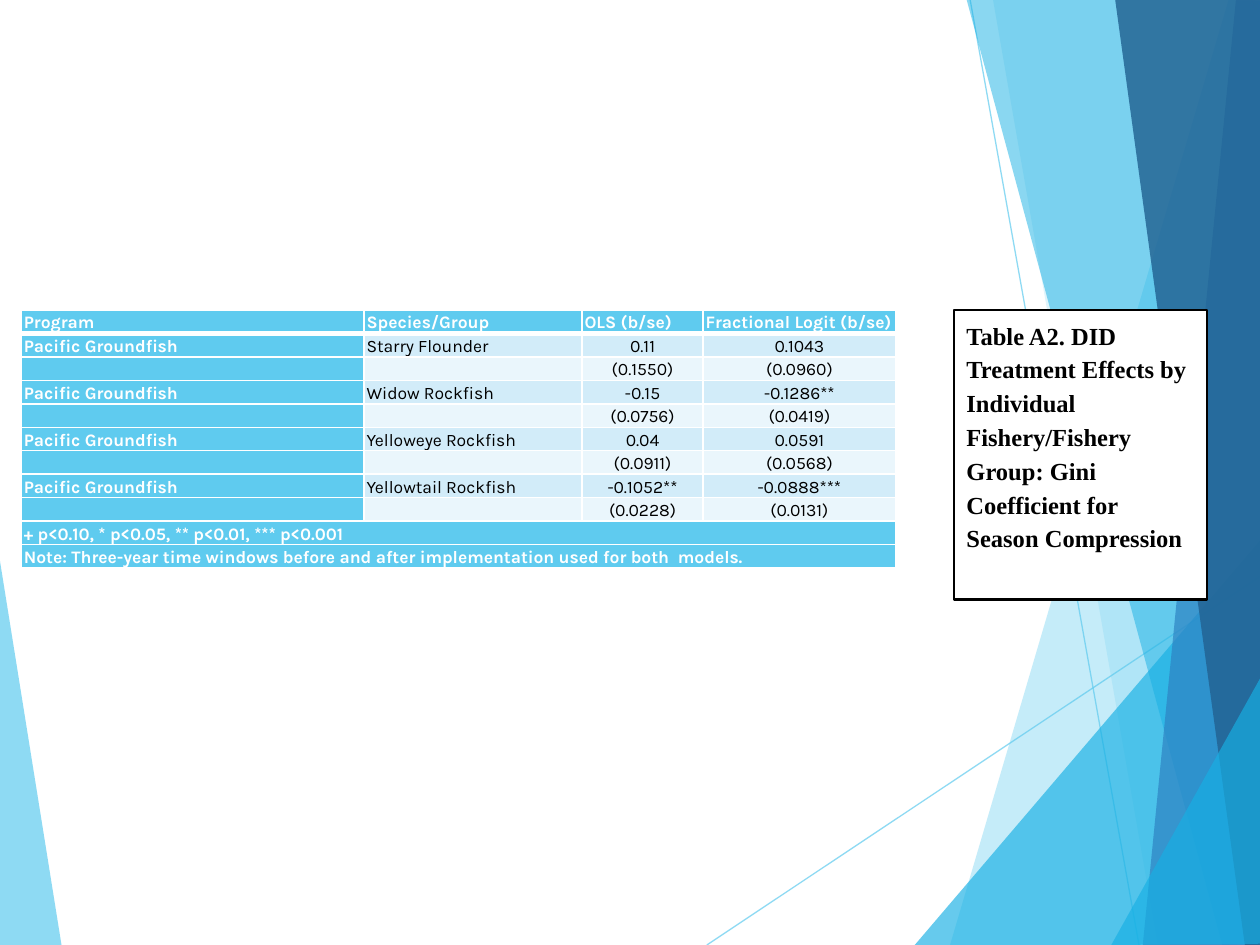
from dataclasses import dataclass

import lxml.etree
import pptx
import pptx.dml.color
import pptx.enum.dml
import pptx.enum.text
import pptx.oxml.ns
import pptx.util

Inches, Pt = pptx.util.Inches, pptx.util.Pt
ALIGN, ANCHOR = pptx.enum.text.PP_ALIGN, pptx.enum.text.MSO_ANCHOR
qn = pptx.oxml.ns.qn


@dataclass(frozen=True)
class Theme:
    sky: str = "5FCBEF"
    cyan: str = "17B0E4"
    blue: str = "2E83C3"
    navy: str = "226292"
    band_dark: str = "D2ECF9"
    band_light: str = "EAF6FC"
    white: str = "FFFFFF"
    black: str = "000000"
    table_font: str = "Karla"
    title_font: str = "Times New Roman"
    table_size: float = 10
    title_size: float = 14
    spacing: float = 1.15


@dataclass(frozen=True)
class Facet:
    points: tuple
    color: str
    opacity: int


@dataclass(frozen=True)
class Ray:
    start: tuple
    end: tuple


@dataclass(frozen=True)
class Estimate:
    species: str
    ols: tuple
    logit: tuple


T = Theme()
LEFT_FACET = Facet(((-0.01, 4.39), (0.49, 7.51), (-0.01, 7.5)), T.sky, 70)
RAYS = (Ray((5.61, 7.5), (10.01, 4.57)), Ray((7.7, 0), (9.04, 7.5)))
RIGHT_FACETS = (
    Facet(((9.75, 0), (7.54, 7.5), (10.02, 7.51), (10.01, 0.01)), T.sky, 36),
    Facet(((7.88, -0.01), (9.19, 7.5), (10.01, 7.5), (10.01, -0.01)), T.sky, 20),
    Facet(((7.26, 7.5), (10, 4.29), (10.01, 7.5)), T.cyan, 66),
    Facet(((7.67, -0.01), (9.7, 7.5), (10.01, 7.49), (10.01, -0.01)), T.cyan, 50),
    Facet(((9.81, -0.01), (9.07, 7.5), (10.01, 7.5), (10, -0.01)), T.blue, 70),
    Facet(((8.85, -0.01), (9.88, 7.5), (10.02, 7.5), (10, -0.01)), T.navy, 82),
    Facet(((8.82, 7.5), (10.02, 5.35), (10.02, 7.49)), T.cyan, 66),
)

TITLE = ("Table A2. DID Treatment Effects by Individual Fishery/Fishery Group: "
         "Gini Coefficient for Season Compression")
PROGRAM = "Pacific Groundfish"
HEADER = ("Program", "Species/Group", "OLS (b/se)", "Fractional Logit (b/se)")
ESTIMATES = (
    Estimate("Starry Flounder", ("0.11", "(0.1550)"), ("0.1043", "(0.0960)")),
    Estimate("Widow Rockfish", ("-0.15", "(0.0756)"), ("-0.1286**", "(0.0419)")),
    Estimate("Yelloweye Rockfish", ("0.04", "(0.0911)"), ("0.0591", "(0.0568)")),
    Estimate("Yellowtail Rockfish", ("-0.1052**", "(0.0228)"), ("-0.0888***", "(0.0131)")),
)
FOOTNOTES = (
    "+ p<0.10, * p<0.05, ** p<0.01, *** p<0.001",
    "Note: Three-year time windows before and after implementation used for both  models.",
)
COL_WIDTHS = (2.72, 1.73, 0.96, 1.53)


def rgb(color: str) -> pptx.dml.color.RGBColor:
    return pptx.dml.color.RGBColor.from_string(color)


def paint(fill, color: str, opacity: int = 100) -> None:
    fill.solid()
    fill.fore_color.rgb = rgb(color)
    if opacity < 100:
        clr = fill.fore_color._xFill.find(qn("a:srgbClr"))
        lxml.etree.SubElement(clr, qn("a:alpha"), val=str(opacity * 1000))


def format_paragraph(p, font: str, size: float, color: str, bold: bool, align) -> None:
    p.font.name, p.font.size, p.font.bold = font, Pt(size), bold
    p.font.color.rgb = rgb(color)
    p.alignment, p.line_spacing = align, T.spacing


def draw_facet(slide, facet: Facet) -> None:
    first, *rest = [(Inches(x), Inches(y)) for x, y in facet.points]
    builder = slide.shapes.build_freeform(*first)
    builder.add_line_segments(rest, close=True)
    sp = builder.convert_to_shape()
    sp.shadow.inherit = False
    paint(sp.fill, facet.color, facet.opacity)
    sp.line.fill.background()


def draw_ray(slide, ray: Ray) -> None:
    ends = [Inches(v) for v in ray.start + ray.end]
    line = slide.shapes.add_connector(pptx.enum.shapes.MSO_CONNECTOR.STRAIGHT, *ends)
    line.line.width = Pt(0.75)
    paint(line.line.fill, T.sky, 70)
    lxml.etree.SubElement(line._element.spPr, qn("a:effectLst"))


def add_borders(cell, top: float, bottom: float) -> None:
    tc_pr = cell._tc.get_or_add_tcPr()
    for side, width in (("L", 1), ("R", 1), ("T", top), ("B", bottom)):
        ln = lxml.etree.SubElement(tc_pr, qn(f"a:ln{side}"), w=str(Pt(width)))
        fill = lxml.etree.SubElement(ln, qn("a:solidFill"))
        lxml.etree.SubElement(fill, qn("a:srgbClr"), val=T.white)


def table_rows() -> list:
    rows = [HEADER]
    for e in ESTIMATES:
        rows.append((PROGRAM, e.species, e.ols[0], e.logit[0]))
        rows.append(("", "", e.ols[1], e.logit[1]))
    return rows + [(note, "", "", "") for note in FOOTNOTES]


def fill_cell(cell, text: str, row: int, col: int, is_note: bool) -> None:
    strong = row == 0 or col == 0 or is_note
    band = T.band_dark if row % 2 else T.band_light
    cell.margin_left = cell.margin_right = Inches(0.02)
    cell.margin_top = cell.margin_bottom = 0
    cell.vertical_anchor = ANCHOR.BOTTOM if is_note else ANCHOR.MIDDLE
    add_borders(cell, top=3 if row == 1 else 1, bottom=3 if row == 0 else 1)
    paint(cell.fill, T.sky if strong else band)
    cell.text = text
    p = cell.text_frame.paragraphs[0]
    format_paragraph(p, T.table_font, T.table_size, T.white if strong else T.black,
                     strong, ALIGN.CENTER if col > 1 and not strong else ALIGN.LEFT)
    if not text:  # keeps blank cells as low as the filled ones
        lxml.etree.SubElement(p._p, qn("a:endParaRPr"), sz=str(int(T.table_size * 100)))


def draw_table(slide) -> None:
    rows = table_rows()
    first_note = len(rows) - len(FOOTNOTES)
    frame = slide.shapes.add_table(len(rows), len(COL_WIDTHS), Inches(0.17), Inches(2.46),
                                   Inches(sum(COL_WIDTHS)), Inches(2.05))
    table = frame.table
    table.first_row = table.horz_banding = False
    tbl_pr = table._tbl.tblPr
    tbl_pr.remove(tbl_pr.find(qn("a:tableStyleId")))
    for column, width in zip(table.columns, COL_WIDTHS):
        column.width = Inches(width)
    for r, row in enumerate(rows):
        for c, text in enumerate(row):
            fill_cell(table.cell(r, c), text, r, c, r >= first_note)
    for r in range(first_note, len(rows)):
        table.cell(r, 0).merge(table.cell(r, len(COL_WIDTHS) - 1))


def draw_title(slide) -> None:
    sp = slide.shapes.title
    sp.left, sp.top, sp.width, sp.height = map(Inches, (7.57, 2.46, 2.01, 1.98))
    paint(sp.fill, T.white)
    paint(sp.line.fill, T.black)
    sp.line.width = Pt(1.5)
    tf = sp.text_frame
    tf.text = TITLE
    tf.word_wrap = True
    tf.vertical_anchor = ANCHOR.TOP
    tf.auto_size = pptx.enum.text.MSO_AUTO_SIZE.SHAPE_TO_FIT_TEXT
    p = tf.paragraphs[0]
    format_paragraph(p, T.title_font, T.title_size, T.black, True, ALIGN.LEFT)
    p.space_after = Pt(10)
    slide.shapes._spTree.append(sp._element)  # in front of the facets


def main() -> None:
    prs = pptx.Presentation()
    prs.slide_width, prs.slide_height = Inches(10), Inches(7.5)
    s = prs.slides.add_slide(prs.slide_layouts[5])
    # Background facets and rays
    draw_facet(s, LEFT_FACET)
    for ray in RAYS:
        draw_ray(s, ray)
    for facet in RIGHT_FACETS:
        draw_facet(s, facet)
    # Results table and its caption
    draw_table(s)
    draw_title(s)
    prs.save("out.pptx")


if __name__ == "__main__":
    main()
